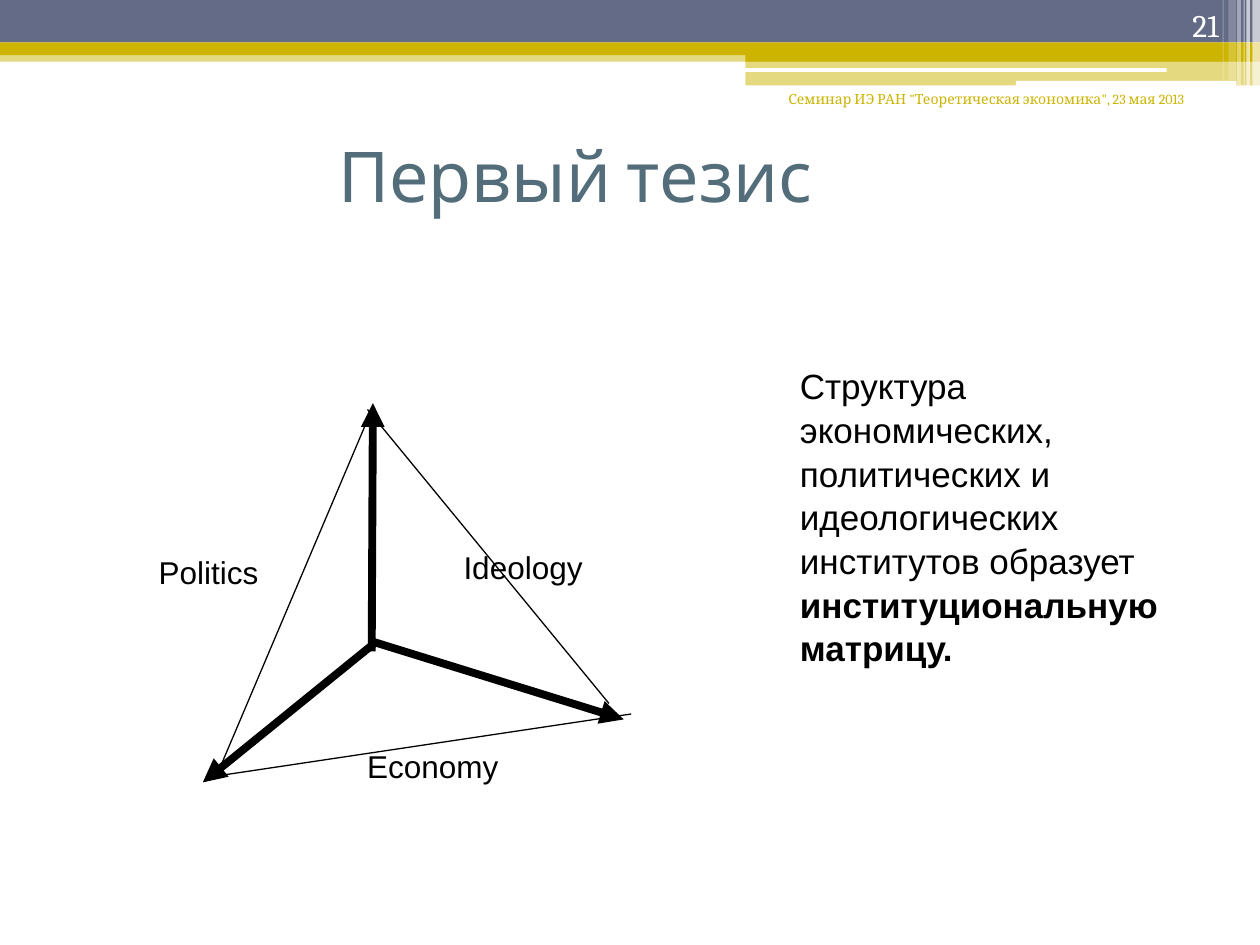
from dataclasses import dataclass
from pptx import Presentation
from pptx import util as u
from pptx.dml.color import RGBColor
from pptx.enum import shapes, text
from pptx.oxml.ns import qn
from pptx.slide import Slide
from lxml import etree

Pt = u.Pt
WHITE = RGBColor(0xFF, 0xFF, 0xFF)
BLACK = RGBColor(0x00, 0x00, 0x00)
SLATE = RGBColor(0x64, 0x6B, 0x86)
GOLD = RGBColor(0xCC, 0xB4, 0x00)
TEAL = RGBColor(0x54, 0x6D, 0x7A)
ALIGN = text.PP_ALIGN
ANCHOR = text.MSO_ANCHOR


@dataclass
class Painter:
    page: Slide
    label_font: str = "Arial"
    label_size: float = 18
    title_font: str = "Cabin"
    title_size: float = 40
    furniture_font: str = "Cambria"

    def band(self, left, top, width, height, color, opacity=100, rounded=False):
        kind = shapes.MSO_SHAPE.ROUNDED_RECTANGLE if rounded else shapes.MSO_SHAPE.RECTANGLE
        box = self.page.shapes.add_shape(kind, Pt(left), Pt(top), Pt(width), Pt(height))
        box.shadow.inherit = False
        box.line.fill.background()
        box.fill.solid()
        box.fill.fore_color.rgb = color
        if opacity < 100:
            tint = box.fill._xPr.find(qn("a:solidFill"))[0]
            etree.SubElement(tint, qn("a:alpha"), val=str(opacity * 1000))

    def line(self, start, end, weight=0.75, arrow=False):
        edge = self.page.shapes.add_connector(
            shapes.MSO_CONNECTOR.STRAIGHT, *map(Pt, (*start, *end)))
        edge.line.color.rgb = BLACK
        edge.line.width = Pt(weight)
        if arrow:
            etree.SubElement(edge.line._get_or_add_ln(), qn("a:tailEnd"), type="triangle")
        etree.SubElement(edge._element.spPr, qn("a:effectLst"))

    def style(self, para, font, size, color, align):
        para.alignment = align
        para.font.name = font
        para.font.size = Pt(size)
        para.font.color.rgb = color

    def label(self, words, left, top, width, height, font=None, size=None,
              color=BLACK, align=ALIGN.LEFT, anchor=ANCHOR.TOP):
        box = self.page.shapes.add_textbox(Pt(left), Pt(top), Pt(width), Pt(height))
        frame = box.text_frame
        frame.word_wrap = True
        frame.vertical_anchor = anchor
        para = frame.paragraphs[0]
        para.add_run().text = words
        self.style(para, font or self.label_font, size or self.label_size, color, align)
        return para

    def title(self, words, left, top, width, height):
        box = self.page.shapes.title
        box.left, box.top, box.width, box.height = map(Pt, (left, top, width, height))
        frame = box.text_frame
        frame.text = words
        frame.word_wrap = True
        frame.auto_size = text.MSO_AUTO_SIZE.NONE
        frame.vertical_anchor = ANCHOR.MIDDLE
        self.style(frame.paragraphs[0], self.title_font, self.title_size, TEAL, ALIGN.LEFT)


def draw_header(painter):
    painter.band(0, 28.8, 720, 6.5, GOLD, 50)
    painter.band(0, 0, 720, 24.3, SLATE)
    painter.band(0, 24.3, 720, 7.2, GOLD)
    painter.band(426, 28, 294, 7.2, GOLD)
    painter.band(426, 34.6, 294, 14.2, GOLD, 50)
    painter.band(425.5, 38.9, 241.2, 2.2, WHITE, rounded=True)
    painter.band(580.5, 46.2, 126, 2.8, WHITE, rounded=True)
    stripes = [(715.7, 4.3, 49, 65), (712.2, 2.1, 49, 65), (710.6, 0.7, 49, 60),
               (707, 2.1, 49, 40), (702, 4.3, 46, 20), (698.6, 0.7, 46, 30)]
    for left, width, height, opacity in stripes:
        painter.band(left, 0, width, height, WHITE, opacity)
    painter.label('Семинар ИЭ РАН "Теоретическая экономика", 23 мая 2013',
                  414, 48.2, 270, 36, painter.furniture_font, 8, GOLD, ALIGN.RIGHT)
    painter.label("21", 643.7, 0, 59.8, 28.8, painter.furniture_font, 18, WHITE,
                  ALIGN.RIGHT, ANCHOR.BOTTOM)


def draw_triangle(painter):
    axes = [((212.4, 372.2), (213.1, 230.4)),
            ((215.3, 366.5), (115.9, 447.1)),
            ((212.4, 366.5), (356.4, 411.1))]
    for start, end in axes:
        painter.line(start, end, 4.5, arrow=True)
    painter.label("Economy", 161.3, 423.4, 172.1, 33.8, align=ALIGN.CENTER)
    painter.label("Politics", 54, 298.1, 130.3, 56.9, align=ALIGN.CENTER,
                  anchor=ANCHOR.MIDDLE)
    painter.label("Ideology", 257.8, 309.6, 115.2, 28.8)
    sides = [((210, 240), (126, 438)),
             ((210, 234), (348, 402)),
             ((120, 444), (360.7, 408))]
    for start, end in sides:
        painter.line(start, end)


def draw_thesis(painter):
    para = painter.label(
        "Структура экономических, политических и идеологических институтов образует ",
        450, 204, 234, 177, size=20)
    para.line_spacing = 1.04
    span = para.add_run()
    span.text = "институциональную матрицу."
    span.font.bold = True
    painter.title("Первый тезис", 186, 72, 378, 55.4)


def main():
    deck = Presentation()
    deck.slide_width, deck.slide_height = Pt(720), Pt(540)
    painter = Painter(deck.slides.add_slide(deck.slide_layouts[5]))
    draw_header(painter)
    draw_triangle(painter)
    draw_thesis(painter)
    deck.save("out.pptx")


if __name__ == "__main__":
    main()
